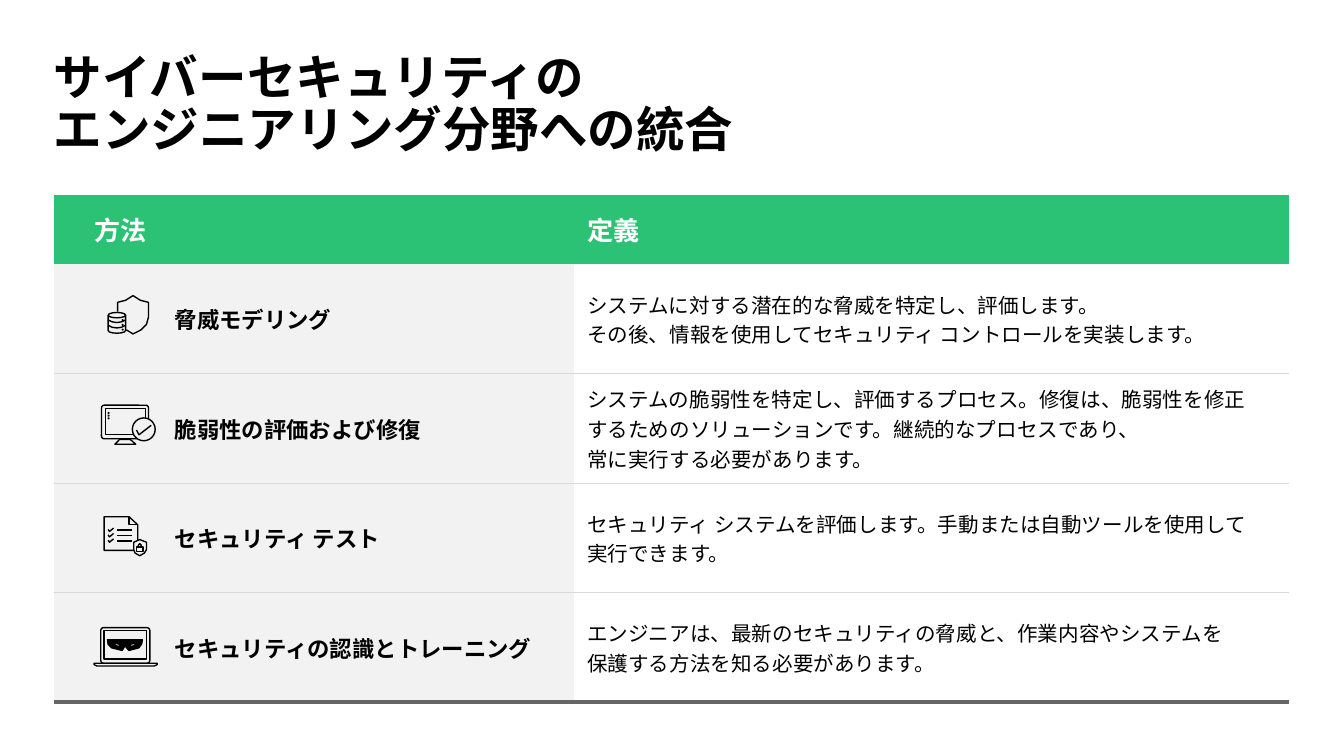
from copy import deepcopy
from dataclasses import dataclass

from lxml import etree
from pptx import Presentation
from pptx.dml.color import RGBColor
from pptx.enum.shapes import MSO_SHAPE
from pptx.enum.text import MSO_ANCHOR
from pptx.oxml.ns import qn
from pptx.util import Pt

PX = 4572
BLACK = RGBColor(0x00, 0x00, 0x00)
WHITE = RGBColor(0xFF, 0xFF, 0xFF)
GREEN = RGBColor(0x2B, 0xC2, 0x75)
PALE = RGBColor(0xF2, 0xF2, 0xF2)
RULE = RGBColor(0xD9, 0xD9, 0xD9)
DARK = RGBColor(0x66, 0x66, 0x66)
MIDDLE = MSO_ANCHOR.MIDDLE
BOX = MSO_SHAPE.RECTANGLE
ROUND = MSO_SHAPE.ROUNDED_RECTANGLE
OVAL = MSO_SHAPE.OVAL
CAN = MSO_SHAPE.CAN


@dataclass
class Row:
    name: str
    text: str
    rule: RGBColor
    width: float


@dataclass
class Part:
    kind: MSO_SHAPE
    box: tuple[int, int, int, int]
    fill: RGBColor | None = None
    bend: float | None = None


@dataclass
class Trace:
    points: list[tuple[int, int]]
    closed: bool = False
    fill: RGBColor | None = None


ROWS = [
    Row("脅威モデリング",
        "システムに対する潜在的な脅威を特定し、評価します。\n"
        "その後、情報を使用してセキュリティ コントロールを実装します。", RULE, 1),
    Row("脆弱性の評価および修復",
        "システムの脆弱性を特定し、評価するプロセス。修復は、脆弱性を修正\n"
        "するためのソリューションです。継続的なプロセスであり、\n"
        "常に実行する必要があります。", RULE, 0.75),
    Row("セキュリティ テスト",
        "セキュリティ システムを評価します。手動または自動ツールを使用して\n"
        "実行できます。", RULE, 0.75),
    Row("セキュリティの認識とトレーニング",
        "エンジニアは、最新のセキュリティの脅威と、作業内容やシステムを\n"
        "保護する方法を知る必要があります。", DARK, 2.25),
]

THREAT = [
    Trace([(175, 464), (175, 450), (187, 447), (198, 440), (209, 447), (221, 450),
           (221, 472), (218, 483), (210, 491), (198, 497), (188, 491)]),
    Part(CAN, (161, 465, 26, 31), bend=0.31),
    *[Trace([(161, y), (167, y + 3), (174, y + 4), (181, y + 3), (187, y)])
      for y in (476, 484)],
    *[Part(OVAL, (182, y, 1, 1), BLACK) for y in (476, 483, 490)],
]
REPAIR = [
    Part(ROUND, (151, 603, 70, 50), bend=0.08),
    Part(BOX, (157, 608, 60, 39)),
    Trace([(178, 654), (171, 661), (202, 661), (194, 654)], True),
    Part(OVAL, (197, 622, 34, 34), PALE),
    Trace([(203, 640), (207, 647), (225, 633)]),
    *[Part(OVAL, (161, y, 1, 1), BLACK) for y in (614, 618, 622)],
]
TEST = [
    Trace([(155, 769), (192, 769), (205, 781), (205, 819), (155, 819)], True),
    Trace([(192, 769), (192, 781), (205, 781)]),
    *[Trace([(174, y), (196, y)]) for y in (789, 797, 805)],
    *[Trace([(161, y), (163, y + 3), (169, y - 2)]) for y in (788, 796, 804)],
    Trace([(208, 803), (218, 807), (218, 818), (215, 823), (208, 827),
           (201, 823), (199, 818), (199, 807)], True, PALE),
    Part(BOX, (203, 814, 10, 7)),
    Trace([(206, 814), (206, 811), (208, 809), (210, 811), (210, 814)]),
]
TRAIN = [
    Part(ROUND, (150, 934, 73, 53), bend=0.08),
    Part(BOX, (155, 938, 63, 43)),
    Trace([(140, 987), (234, 987), (234, 989), (230, 991), (144, 991), (140, 989)],
          True, PALE),
    Trace([(160, 952), (212, 952), (211, 958), (207, 964), (192, 968), (186, 961),
           (182, 968), (166, 964), (161, 959)], True, BLACK),
    *[Trace([(186 + s * 17, 957), (186 + s * 7, 959), (186 + s * 9, 962),
             (186 + s * 14, 961)], True, PALE) for s in (-1, 1)],
]


def style(para, size: float, color: RGBColor, bold: bool, face: str) -> None:
    for run in para.runs:
        font = run.font
        font.size, font.bold, font.name = Pt(size), bold, face
        font.color.rgb = color
    for br in para._p.findall(qn("a:br")):
        br.insert(0, deepcopy(para.runs[0]._r.rPr))


def ink(shape, fill: RGBColor | None) -> None:
    shape.shadow.inherit = False
    if fill is None:
        shape.fill.background()
    else:
        shape.fill.solid()
        shape.fill.fore_color.rgb = fill
    shape.line.color.rgb = BLACK
    shape.line.width = Pt(0.75)


def draw(shapes, item: Part | Trace) -> None:
    if isinstance(item, Part):
        shape = shapes.add_shape(item.kind, *[n * PX for n in item.box])
        if item.bend is not None:
            shape.adjustments[0] = item.bend
    else:
        first, *rest = item.points
        pen = shapes.build_freeform(*first, scale=PX)
        pen.add_line_segments(rest, close=item.closed)
        shape = pen.convert_to_shape()
    ink(shape, item.fill)


def edge(cell, tag: str, color: RGBColor | None, width: float, spot: int) -> None:
    line = etree.Element(qn(f"a:{tag}"), w=str(Pt(width)))
    if color is None:
        etree.SubElement(line, qn("a:noFill"))
    else:
        solid = etree.SubElement(line, qn("a:solidFill"))
        etree.SubElement(solid, qn("a:srgbClr"), val=str(color))
    cell._tc.get_or_add_tcPr().insert(spot, line)


def write(cell, text: str, size: float, color: RGBColor, bold: bool,
          fill: RGBColor | None, left: int, top: tuple, low: tuple) -> None:
    para = cell.text_frame.paragraphs[0]
    para.text = text.replace("\n", "\v")
    style(para, size, color, bold, "Calibri")
    cell.vertical_anchor = MIDDLE
    cell.margin_left = left * PX
    if fill is None:
        cell.fill.background()
    else:
        cell.fill.solid()
        cell.fill.fore_color.rgb = fill
    sides = [("lnL", None, 0), ("lnR", None, 0), ("lnT", *top), ("lnB", *low)]
    for spot, (tag, shade, width) in enumerate(sides):
        edge(cell, tag, shade, width, spot)


def main() -> None:
    deck = Presentation()
    deck.slide_width, deck.slide_height = 2000 * PX, 1125 * PX
    shapes = deck.slides.add_slide(deck.slide_layouts[6]).shapes

    frame = shapes.add_textbox(80 * PX, 80 * PX, 1838 * PX, 160 * PX).text_frame
    frame.word_wrap = True
    frame.margin_left = frame.margin_right = frame.margin_top = frame.margin_bottom = 0
    title = frame.paragraphs[0]
    title.text = "サイバーセキュリティの\vエンジニアリング分野への統合"
    title.line_spacing = 0.9
    style(title, 26, BLACK, True, "Arial")

    table = shapes.add_table(5, 2, 80 * PX, 290 * PX, 1839 * PX, 755 * PX).table
    table.first_row = table.horz_banding = False
    for col, width in zip(table.columns, (774, 1065)):
        col.width = width * PX
    for row, height in zip(table.rows, (103, 163, 163, 163, 163)):
        row.height = height * PX

    top = (None, 0)
    for col, (text, left) in enumerate([("方法", 60), ("定義", 20)]):
        write(table.cell(0, col), text, 14, WHITE, True, GREEN, left, top, top)
    for num, row in enumerate(ROWS, 1):
        low = (row.rule, row.width)
        write(table.cell(num, 0), row.name, 12, BLACK, True, PALE, 180, top, low)
        write(table.cell(num, 1), row.text, 11, BLACK, False, None, 20, top, low)
        top = low

    for icon in (THREAT, REPAIR, TEST, TRAIN):
        for item in icon:
            draw(shapes, item)
    deck.save("out.pptx")


if __name__ == "__main__":
    main()
